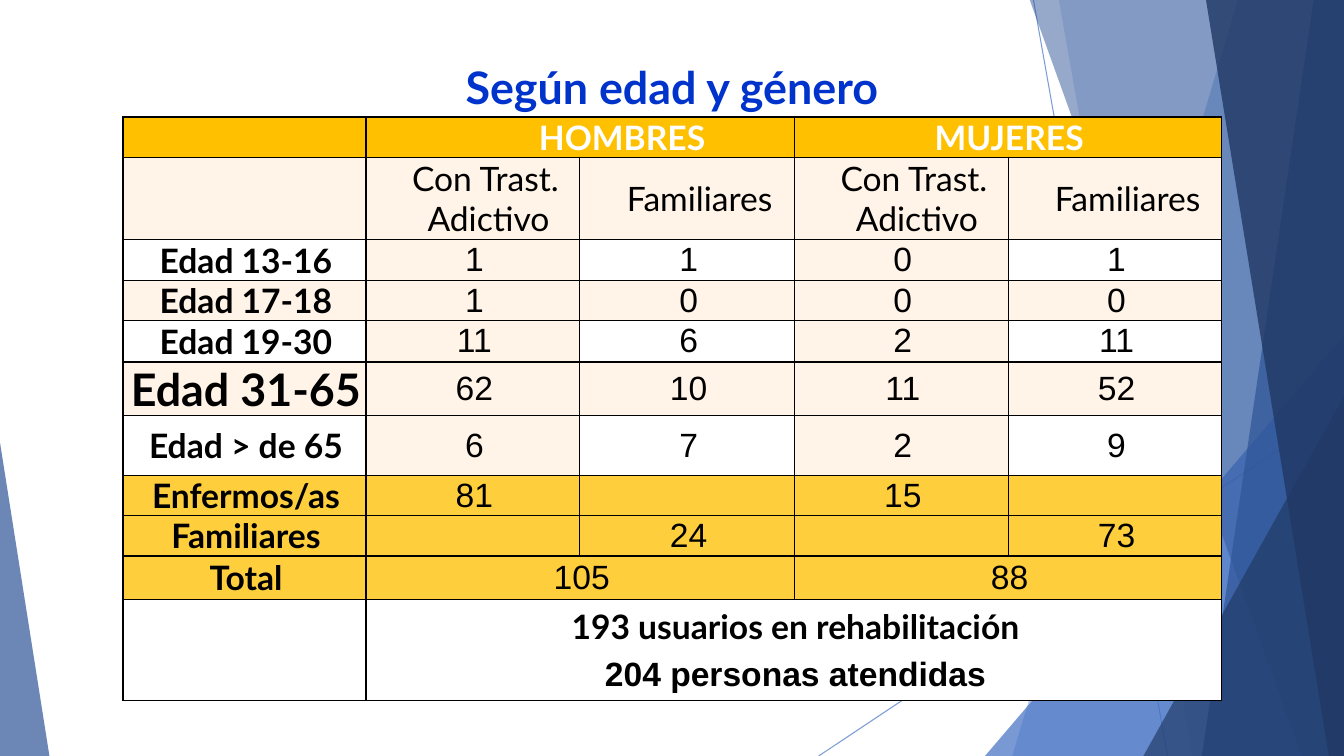
from dataclasses import dataclass

from lxml import etree
from pptx import Presentation
from pptx.dml.color import RGBColor
from pptx.enum.shapes import MSO_CONNECTOR, MSO_SHAPE
from pptx.enum.text import MSO_ANCHOR, PP_ALIGN
from pptx.oxml import parse_xml
from pptx.oxml.ns import nsdecls, qn
from pptx.util import Inches, Pt

STRAIGHT = MSO_CONNECTOR.STRAIGHT
TRIANGLE = MSO_SHAPE.ISOSCELES_TRIANGLE
CENTER = PP_ALIGN.CENTER
TOP, MIDDLE = MSO_ANCHOR.TOP, MSO_ANCHOR.MIDDLE
WIDTH, HEIGHT = 13.33, 7.5
BLUE, DARK, NAVY = "4472C4", "2F5597", "203864"
GOLD, AMBER, CREAM, WHITE = "FFC000", "FFCE3C", "FFF4E7", "FFFFFF"
BLACK = "000000"


@dataclass
class Ray:
    start: tuple[float, float]
    end: tuple[float, float]


@dataclass
class Band:
    """Facet reaching the right edge, bounded by a slanted left side."""
    top: float
    foot: float
    color: str
    alpha: int


@dataclass
class Wedge:
    left: float
    top: float
    width: float
    apex: float
    color: str
    alpha: int


@dataclass
class Style:
    fill: str
    font: str = "Arial"
    size: int = 24
    bold: bool = False
    color: str = BLACK
    indent: float = 0.03
    first: float = 0


BACKDROP = [
    Ray((10.25, 0), (11.58, HEIGHT)),
    Ray((WIDTH, 4.03), (8.12, HEIGHT)),
    Band(12.28, 10.04, BLUE, 36),
    Band(10.5, 11.83, BLUE, 20),
    Wedge(9.77, 3.33, 3.56, 1, BLUE, 72),
    Band(10.21, 12.91, DARK, 50),
    Band(13.03, 11.92, DARK, 70),
    Band(11.96, 13.18, NAVY, 80),
    Wedge(11.34, 3.93, 1.99, 1, NAVY, 66),
    Wedge(0, 4.39, 0.49, 0, DARK, 70),
]

COLS = [2.41, 2.12, 2.13, 2.12, 2.12]
ROWS = [0.29, 0.82, 0.4, 0.4, 0.41, 0.4, 0.59, 0.4, 0.4, 0.43, 1]
CELLS = [
    ["", "HOMBRES", "", "MUJERES", ""],
    ["", "Con Trast. Adictivo", "Familiares", "Con Trast. Adictivo", "Familiares"],
    ["Edad 13-16", "1", "1", "0", "1"],
    ["Edad 17-18", "1", "0", "0", "0"],
    ["Edad 19-30", "11", "6", "2", "11"],
    ["Edad 31-65", "62", "10", "11", "52"],
    ["Edad > de 65", "6", "7", "2", "9"],
    ["Enfermos/as", "81", "", "15", ""],
    ["Familiares", "", "24", "", "73"],
    ["Total", "105", "", "88", ""],
    ["", "193 usuarios en rehabilitación\n204 personas atendidas", "", "", ""],
]
HEAD, SUB, PEAK, SUMS, TOTAL, LAST = 0, 1, 5, 7, 9, 10
SPANS = [(HEAD, 1, 2), (HEAD, 3, 4), (TOTAL, 1, 2), (TOTAL, 3, 4), (LAST, 1, 4)]


def paint(target, color: str, alpha: int = 100) -> None:
    """Fill a shape, line or cell with a hex colour."""
    target.fill.solid()
    target.fill.fore_color.rgb = RGBColor.from_string(color)
    if alpha < 100:
        node = target.fill._xPr.find(f"{qn('a:solidFill')}/{qn('a:srgbClr')}")
        etree.SubElement(node, qn("a:alpha")).set("val", str(alpha * 1000))


def finish(shape, color: str, alpha: int) -> None:
    shape.shadow.inherit = False
    shape.line.fill.background()
    paint(shape, color, alpha)


def draw_ray(shapes, ray: Ray) -> None:
    ends = [Inches(n) for n in ray.start + ray.end]
    line = shapes.add_connector(STRAIGHT, *ends)
    line.line.width = Pt(0.75)
    paint(line.line, BLUE, 70)
    etree.SubElement(line._element.spPr, qn("a:effectLst"))


def draw_band(shapes, band: Band) -> None:
    pen = shapes.build_freeform(Inches(band.top), Inches(-0.01))
    points = [(WIDTH, -0.01), (WIDTH, HEIGHT), (band.foot, HEIGHT)]
    pen.add_line_segments([(Inches(x), Inches(y)) for x, y in points], close=True)
    finish(pen.convert_to_shape(), band.color, band.alpha)


def draw_wedge(shapes, wedge: Wedge) -> None:
    shape = shapes.add_shape(TRIANGLE, Inches(wedge.left), Inches(wedge.top),
                             Inches(wedge.width), Inches(HEIGHT - wedge.top))
    shape.adjustments[0] = wedge.apex
    finish(shape, wedge.color, wedge.alpha)


def set_font(font, name: str, size: int, bold: bool, color: str) -> None:
    font.name, font.size, font.bold = name, Pt(size), bold
    font.color.rgb = RGBColor.from_string(color)


def pick_style(row: int, col: int) -> Style:
    if row == HEAD:
        return Style(GOLD, "Lato", bold=True, color=WHITE,
                     indent=0.83 if col == 1 else 0.02)
    if row == SUB:
        return Style(CREAM, "Lato", indent=0.31, first=-0.06)
    if row == LAST:
        return Style(WHITE, "Lato", bold=True)
    striped = row % 2 == 1 or col in (1, 3)
    fill = AMBER if row >= SUMS else CREAM if striped else WHITE
    if col == 0:
        return Style(fill, "Lato", 32 if row == PEAK else 24, True)
    return Style(fill)


def fill_cell(cell, text: str, style: Style) -> None:
    props = cell._tc.get_or_add_tcPr()
    for side in "LRTB":
        props.append(parse_xml(
            f'<a:ln{side} {nsdecls("a")} w="12700"><a:solidFill>'
            f'<a:srgbClr val="{BLACK}"/></a:solidFill></a:ln{side}>'))
    paint(cell, style.fill)
    cell.margin_left = cell.margin_right = cell.margin_top = cell.margin_bottom = 0
    cell.vertical_anchor = MIDDLE
    cell.text_frame.text = text
    for i, para in enumerate(cell.text_frame.paragraphs):
        para.alignment = CENTER
        para.space_before = Pt(6.3 if i else 0)
        layout = para._p.get_or_add_pPr()
        layout.set("marL", str(Inches(style.indent)))
        layout.set("indent", str(Inches(style.first)))
        for run in para.runs:
            set_font(run.font, "Arial" if i else style.font, style.size,
                     style.bold, style.color)


def draw_table(shapes) -> None:
    grid = shapes.add_table(len(ROWS), len(COLS), Inches(1.22), Inches(1.16),
                            Inches(sum(COLS)), Inches(sum(ROWS))).table
    grid.first_row = grid.horz_banding = False
    for col, width in zip(grid.columns, COLS):
        col.width = Inches(width)
    for row, height in zip(grid.rows, ROWS):
        row.height = Inches(height)
    for r, texts in enumerate(CELLS):
        for c, text in enumerate(texts):
            fill_cell(grid.cell(r, c), text, pick_style(r, c))
    for row, left, right in SPANS:
        grid.cell(row, left).merge(grid.cell(row, right))


def draw_title(shapes) -> None:
    title = shapes.title
    title.left, title.top = Inches(0), Inches(0.54)
    title.width, title.height = Inches(WIDTH), Inches(1.24)
    frame = title.text_frame
    frame.text = "Según edad y género"
    frame.vertical_anchor = TOP
    para = frame.paragraphs[0]
    para.alignment = CENTER
    set_font(para.runs[0].font, "Lato", 32, True, "0033CC")
    shapes._spTree.append(title._element)


def main() -> None:
    deck = Presentation()
    deck.slide_width, deck.slide_height = Inches(WIDTH), Inches(HEIGHT)
    shapes = deck.slides.add_slide(deck.slide_layouts[5]).shapes

    # Faceted backdrop
    tools = {Ray: draw_ray, Band: draw_band, Wedge: draw_wedge}
    for part in BACKDROP:
        tools[type(part)](shapes, part)

    # Title and table in front
    draw_title(shapes)
    draw_table(shapes)
    deck.save("out.pptx")


if __name__ == "__main__":
    main()
